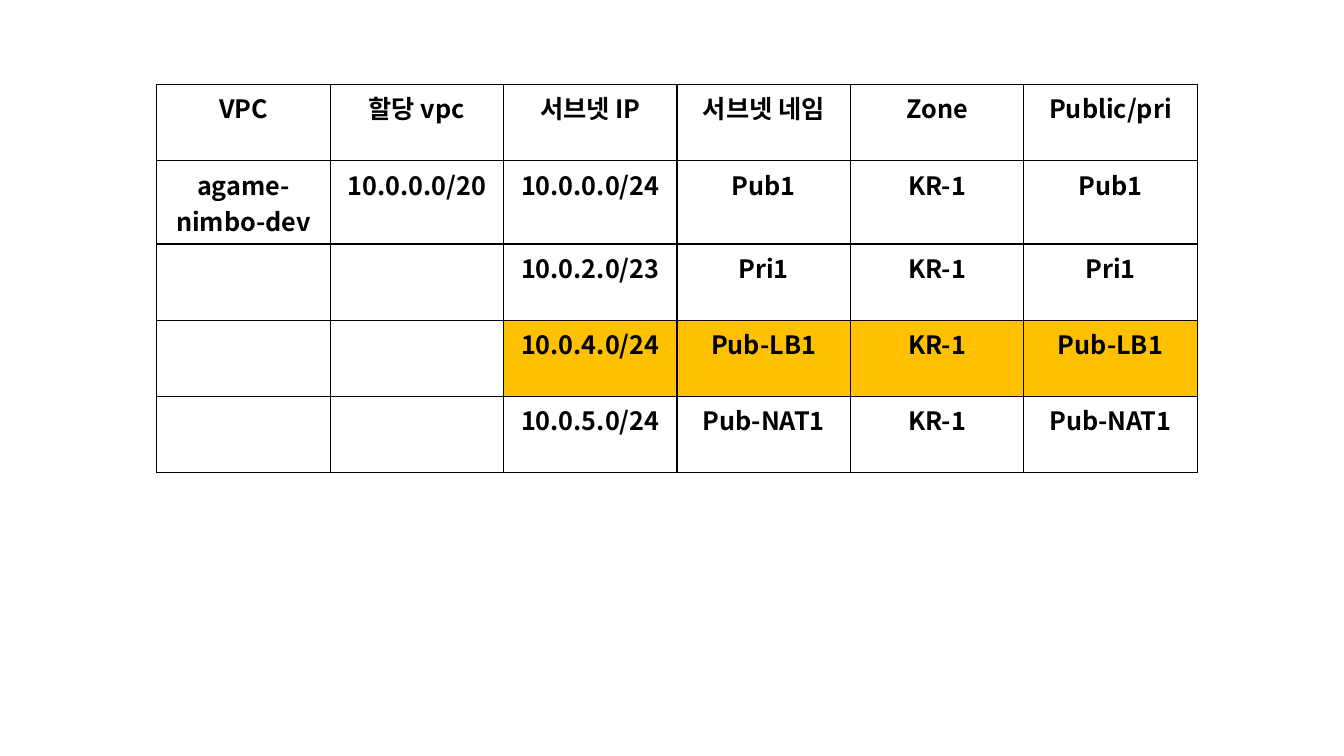
from pptx import Presentation
from pptx.dml.color import RGBColor
from pptx.enum.text import PP_ALIGN
from pptx.oxml.ns import qn
from pptx.util import Cm, Pt
from lxml.etree import SubElement

BLACK = RGBColor(0x00, 0x00, 0x00)
WHITE = RGBColor(0xFF, 0xFF, 0xFF)
AMBER = RGBColor(0xFF, 0xC0, 0x00)

SUBNETS = [
    ["VPC", "할당 vpc", "서브넷 IP", "서브넷 네임", "Zone", "Public/pri"],
    ["agame-nimbo-dev", "10.0.0.0/20", "10.0.0.0/24", "Pub1", "KR-1", "Pub1"],
    ["", "", "10.0.2.0/23", "Pri1", "KR-1", "Pri1"],
    ["", "", "10.0.4.0/24", "Pub-LB1", "KR-1", "Pub-LB1"],
    ["", "", "10.0.5.0/24", "Pub-NAT1", "KR-1", "Pub-NAT1"],
]
HEIGHTS = [1.92, 2.1, 1.92, 1.92, 1.92]
LB_ROW = 3


class Deck:
    face = "Noto Sans CJK KR"
    size = Pt(18)

    def __init__(self, slide):
        self.slide = slide

    def table(self, left, top, width, rows, heights):
        count = len(rows[0])
        frame = self.slide.shapes.add_table(
            len(rows), count, Cm(left), Cm(top),
            Cm(width * count), Cm(sum(heights)))
        table = frame.table
        table.first_row = table.horz_banding = False
        for col in table.columns:
            col.width = Cm(width)
        for row, height in zip(table.rows, heights):
            row.height = Cm(height)
        for r, texts in enumerate(rows):
            for c, text in enumerate(texts):
                marked = r == LB_ROW and text
                self.cell(table.cell(r, c), text, AMBER if marked else WHITE)

    def cell(self, cell, text, color):
        cell.text = text
        par = cell.text_frame.paragraphs[0]
        par.alignment = PP_ALIGN.CENTER
        font = par.font
        font.name, font.size, font.bold = self.face, self.size, True
        font.color.rgb = BLACK
        for props in par._p.iter(qn("a:defRPr")):
            SubElement(props, qn("a:ea"), typeface=self.face)
        self.border(cell)
        cell.fill.solid()
        cell.fill.fore_color.rgb = color

    def border(self, cell):
        props = cell._tc.get_or_add_tcPr()
        for side in ("L", "R", "T", "B"):
            line = SubElement(props, qn(f"a:ln{side}"), w=str(Pt(1)))
            fill = SubElement(line, qn("a:solidFill"))
            SubElement(fill, qn("a:srgbClr"), val=str(BLACK))


def main():
    show = Presentation()
    show.slide_width, show.slide_height = Cm(33.87), Cm(19.05)
    deck = Deck(show.slides.add_slide(show.slide_layouts[6]))
    deck.table(3.95, 2.13, 4.37, SUBNETS, HEIGHTS)
    show.save("out.pptx")


if __name__ == "__main__":
    main()
